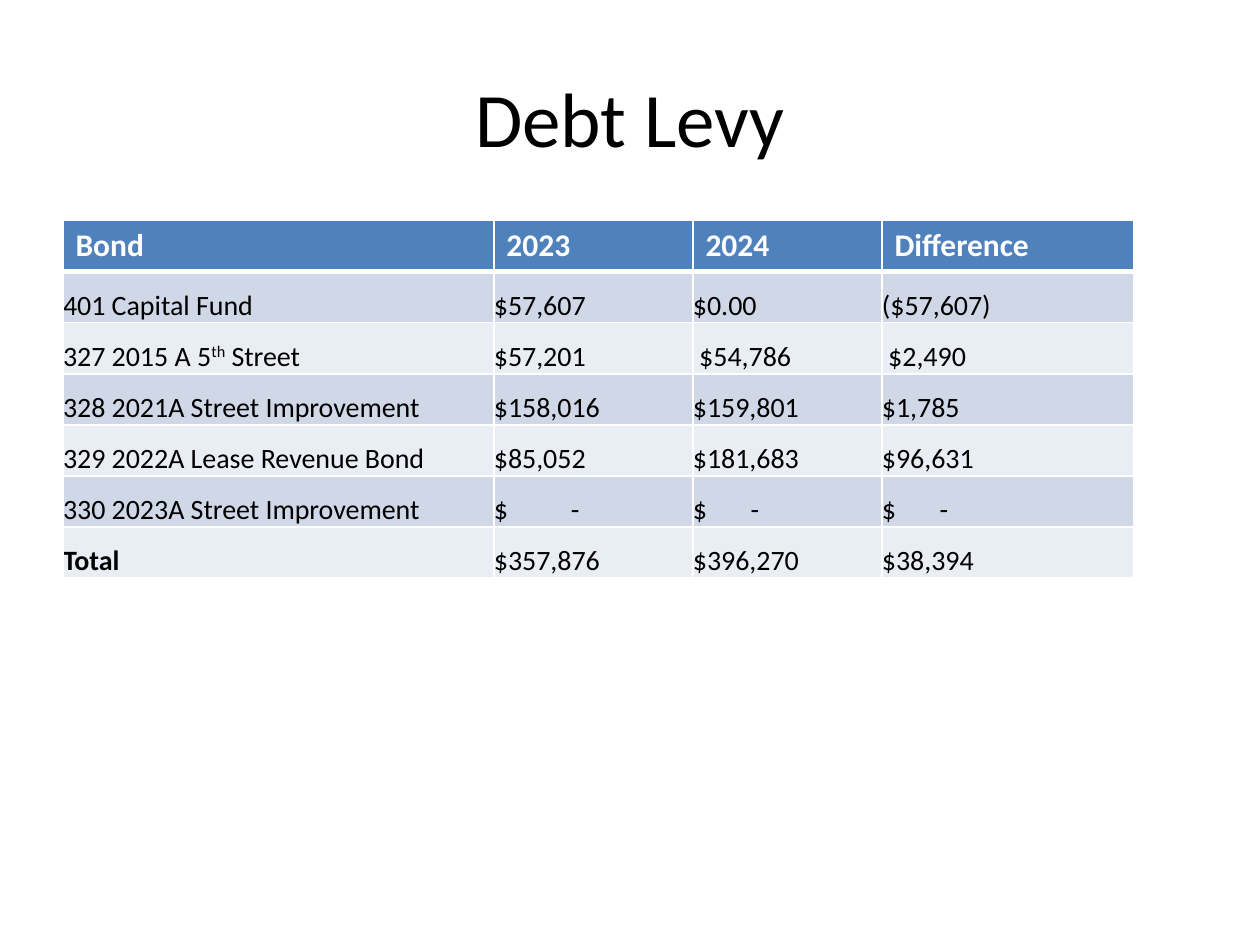
from dataclasses import dataclass

from lxml.etree import SubElement
from pptx import Presentation
from pptx.dml.color import RGBColor
from pptx.enum.text import MSO_ANCHOR, PP_ALIGN
from pptx.oxml import parse_xml
from pptx.oxml.ns import nsdecls, qn
from pptx.util import Pt

# Content: a cell is a string, or a list of (text, is superscript) spans
TITLE = "Debt Levy"
HEADER = ["Bond", "2023", "2024", "Difference"]
BONDS = [
    ["401 Capital Fund", "$57,607", "$0.00", "($57,607)"],
    [[("327 2015 A 5", False), ("th", True), (" Street", False)],
     "$57,201", " $54,786", " $2,490"],
    ["328 2021A Street Improvement", "$158,016", "$159,801", "$1,785"],
    ["329 2022A Lease Revenue Bond", "$85,052", "$181,683", "$96,631"],
    ["330 2023A Street Improvement", "$\t-", "$\t-", "$\t-"],
    ["Total", "$357,876", "$396,270", "$38,394"],
]
ROWS = [HEADER] + BONDS

# Layout in points
COLUMN_WIDTHS = [246.24, 113.76, 108, 144]
DASH_TABS = [0, 44, 33, 33]
TABLE_LEFT, TABLE_TOP, TABLE_HEIGHT = 36, 126, 204.4


@dataclass(frozen=True)
class Theme:
    font: str = "Calibri"
    title_size: int = 44
    header_size: int = 18
    body_size: int = 16
    text: str = "000000"
    light: str = "FFFFFF"
    header_fill: str = "4F81BD"
    band_fills: tuple = ("D0D8E8", "E9EDF4")
    thin: int = 1
    thick: int = 3


THEME = Theme()


def style(span, size, color, bold=False):
    span.font.name = THEME.font
    span.font.size = Pt(size)
    span.font.bold = bold
    span.font.color.rgb = RGBColor.from_string(color)


def add_borders(cell, top, bottom):
    properties = cell._tc.get_or_add_tcPr()
    sides = [("L", THEME.thin), ("R", THEME.thin), ("T", top), ("B", bottom)]
    for position, (side, width) in enumerate(sides):
        line = parse_xml(
            f'<a:ln{side} {nsdecls("a")} w="{Pt(width)}"><a:solidFill>'
            f'<a:srgbClr val="{THEME.light}"/></a:solidFill></a:ln{side}>')
        properties.insert(position, line)


def add_tab(para, position):
    tabs = SubElement(para._p.get_or_add_pPr(), qn("a:tabLst"))
    SubElement(tabs, qn("a:tab"), pos=str(Pt(position)), algn="l")


def fill_cell(cell, content, row, column):
    is_header = row == 0
    para = cell.text_frame.paragraphs[0]
    spans = [(content, False)] if isinstance(content, str) else content
    if any("\t" in text for text, _ in spans):
        add_tab(para, DASH_TABS[column])
    size = THEME.header_size if is_header else THEME.body_size
    color = THEME.light if is_header else THEME.text
    for text, raised in spans:
        span = para.add_run()
        span.text = text
        style(span, size, color, bold=is_header or content == "Total")
        if raised:
            span._r.get_or_add_rPr().set("baseline", "30000")

    if not is_header:
        cell.vertical_anchor = MSO_ANCHOR.BOTTOM
        cell.margin_left = cell.margin_right = 0
        cell.margin_top = cell.margin_bottom = 0
    fill = THEME.header_fill if is_header else THEME.band_fills[(row - 1) % 2]
    cell.fill.solid()
    cell.fill.fore_color.rgb = RGBColor.from_string(fill)
    add_borders(cell,
                top=THEME.thick if row == 1 else THEME.thin,
                bottom=THEME.thick if is_header else THEME.thin)


def add_title(page):
    box = page.shapes.add_textbox(Pt(36), Pt(21.6), Pt(648), Pt(90))
    frame = box.text_frame
    frame.word_wrap = True
    frame.vertical_anchor = MSO_ANCHOR.MIDDLE
    frame.text = TITLE
    para = frame.paragraphs[0]
    para.alignment = PP_ALIGN.CENTER
    style(para.runs[0], THEME.title_size, THEME.text)


def add_levy_table(page):
    table = page.shapes.add_table(
        len(ROWS), len(HEADER), Pt(TABLE_LEFT), Pt(TABLE_TOP),
        Pt(sum(COLUMN_WIDTHS)), Pt(TABLE_HEIGHT)).table
    for column, width in zip(table.columns, COLUMN_WIDTHS):
        column.width = Pt(width)
    for row, contents in enumerate(ROWS):
        for column, content in enumerate(contents):
            fill_cell(table.cell(row, column), content, row, column)


def main():
    deck = Presentation()
    deck.slide_width, deck.slide_height = Pt(720), Pt(540)
    page = deck.slides.add_slide(deck.slide_layouts[6])
    add_title(page)
    add_levy_table(page)
    deck.save("out.pptx")


if __name__ == "__main__":
    main()
